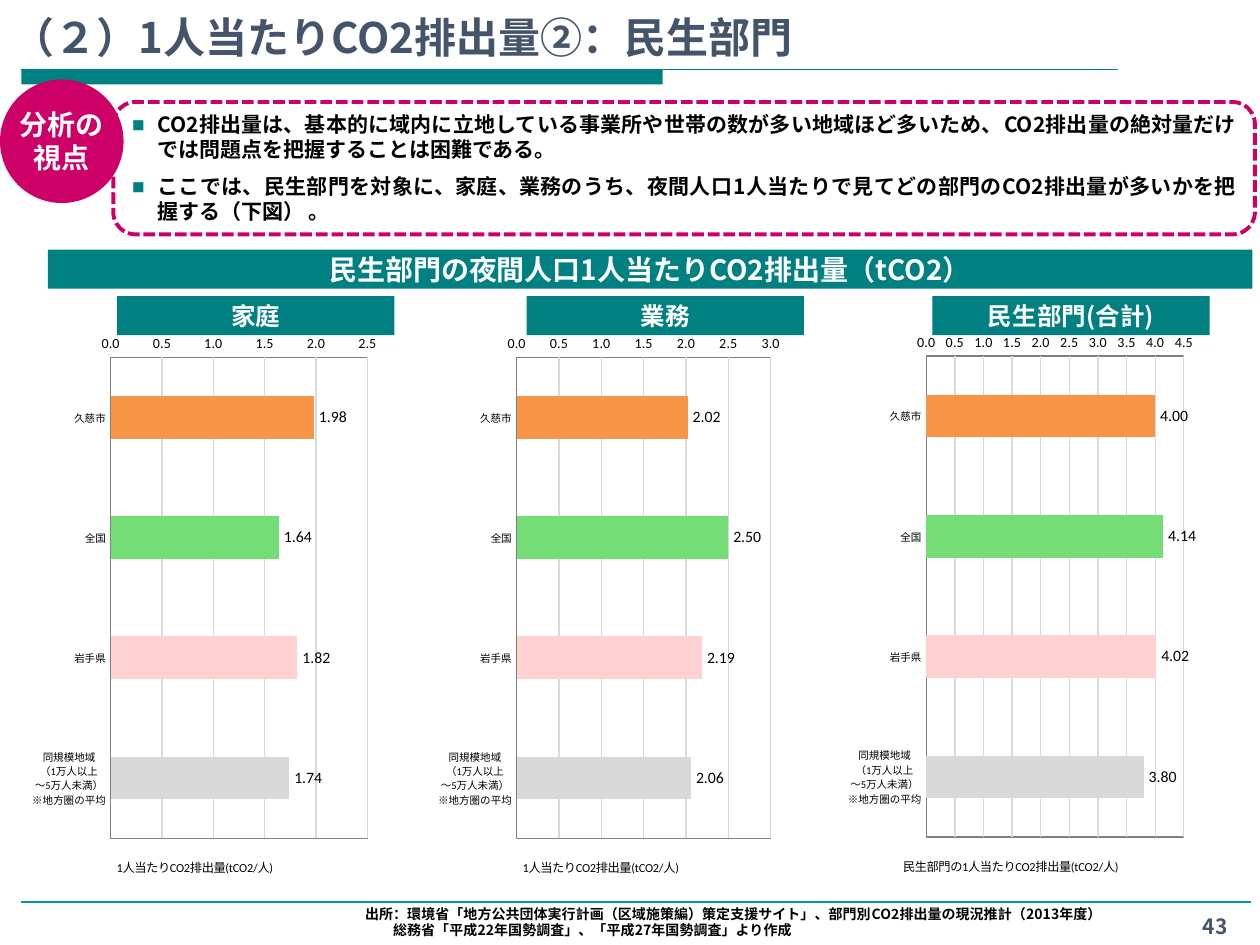
from dataclasses import dataclass

from lxml import etree
from pptx import Presentation
from pptx.chart.data import CategoryChartData
from pptx.dml.color import RGBColor
from pptx.enum.chart import XL_CHART_TYPE, XL_LABEL_POSITION, XL_TICK_MARK
from pptx.enum.dml import MSO_LINE
from pptx.enum.shapes import MSO_CONNECTOR, MSO_SHAPE
from pptx.enum.text import MSO_ANCHOR, PP_ALIGN
from pptx.oxml.ns import qn
from pptx.util import Pt

BARS = XL_CHART_TYPE.BAR_CLUSTERED
OUTSIDE = XL_LABEL_POSITION.OUTSIDE_END
NO_TICK = XL_TICK_MARK.NONE
DASH = MSO_LINE.SQUARE_DOT
STRAIGHT = MSO_CONNECTOR.STRAIGHT
RECT, OVAL, ROUND = MSO_SHAPE.RECTANGLE, MSO_SHAPE.OVAL, MSO_SHAPE.ROUNDED_RECTANGLE
MIDDLE, BOTTOM, TOP = MSO_ANCHOR.MIDDLE, MSO_ANCHOR.BOTTOM, MSO_ANCHOR.TOP
LEFT, CENTER, JUSTIFY = PP_ALIGN.LEFT, PP_ALIGN.CENTER, PP_ALIGN.JUSTIFY


@dataclass(frozen=True)
class Theme:
    font: str = "Noto Sans CJK JP"
    chart_font: str = "Calibri"
    teal: str = "008080"
    rule: str = "009999"
    pink: str = "CC0066"
    slate: str = "44546A"
    black: str = "000000"
    white: str = "FFFFFF"
    axis: str = "808080"
    grid: str = "D9D9D9"
    bars: tuple = ("F79646", "75DD75", "FFD1D1", "D9D9D9")
    title: int = 24
    head: int = 16
    sub: int = 14
    body: int = 12
    note: int = 8
    leading: float = 1.18


@dataclass(frozen=True)
class Box:
    x: float
    y: float
    w: float
    h: float

    def span(self) -> tuple:
        return Pt(self.x), Pt(self.y), Pt(self.w), Pt(self.h)


@dataclass(frozen=True)
class Panel:
    name: str
    head_x: float
    box: Box
    vals: tuple
    top: float
    caption: str
    caption_x: float


THEME = Theme()
UNIT = "1人当たりCO2排出量(tCO2/人)"
PLACES = ("久慈市", "全国", "岩手県",
          "同規模地域\n（1万人以上\n～5万人未満）\n※地方圏の平均")
PANELS = (
    Panel("家庭", 67, Box(13.7, 184.3, 206.6, 331.2),
          (1.98, 1.64, 1.82, 1.74), 2.5, UNIT, 0.25),
    Panel("業務", 301, Box(246.2, 184.3, 204.5, 331.2),
          (2.02, 2.5, 2.19, 2.06), 3, UNIT, 0.25),
    Panel("民生部門(合計)", 532.8, Box(479.5, 183.6, 207.4, 331.2),
          (4, 4.14, 4.02, 3.8), 4.5, "民生部門の" + UNIT, 0.17),
)
POINTS = (
    "CO2排出量は、基本的に域内に立地している事業所や世帯の数が多い地域ほど多いため、"
    "CO2排出量の絶対量だけでは問題点を把握することは困難である。",
    "ここでは、民生部門を対象に、家庭、業務のうち、夜間人口1人当たりで見て"
    "どの部門のCO2排出量が多いかを把握する（下図） 。",
)
SOURCES = (
    "出所：環境省「地方公共団体実行計画（区域施策編）策定支援サイト」、"
    "部門別CO2排出量の現況推計（2013年度）",
    "総務省「平成22年国勢調査」、「平成27年国勢調査」より作成",
)


def rgb(code: str) -> RGBColor:
    return RGBColor.from_string(code)


def add(parent, tag: str, **attrs):
    return etree.SubElement(parent, qn(tag), attrs)


def write(shape, lines: tuple, size: int, color: str, align=CENTER, anchor=MIDDLE) -> list:
    """Fill a shape with bold paragraphs and return them."""
    frame = shape.text_frame
    frame.word_wrap = True
    frame.vertical_anchor = anchor
    for i, line in enumerate(lines):
        para = frame.add_paragraph() if i else frame.paragraphs[0]
        para.text = line
        para.alignment = align
        para.line_spacing = Pt(round(size * THEME.leading, 1))
    return [style(para, size, color) for para in frame.paragraphs]


def style(para, size: int, color: str):
    font = para.font
    font.size, font.bold, font.name = Pt(size), True, THEME.font
    font.color.rgb = rgb(color)
    add(para._p.pPr.find(qn("a:defRPr")), "a:ea", typeface=THEME.font)
    return para


def indent(para, left: float, first: float = 0) -> None:
    props = para._p.get_or_add_pPr()
    props.set("marL", str(Pt(left)))
    props.set("indent", str(Pt(first)))


def bullet(para) -> None:
    indent(para, 14.4, -14.4)
    props = para._p.pPr
    marks = etree.Element("marks")
    add(add(marks, "a:buClr"), "a:srgbClr", val=THEME.teal)
    add(marks, "a:buSzPct", val="60000")
    add(marks, "a:buFont", typeface=THEME.font)
    add(marks, "a:buChar", char="■")
    font = props.find(qn("a:defRPr"))
    for mark in list(marks):
        font.addprevious(mark)


def block(slide, kind, box: Box, fill: str = ""):
    shape = slide.shapes.add_shape(kind, *box.span())
    shape.shadow.inherit = False
    shape.line.fill.background()
    if fill:
        shape.fill.solid()
        shape.fill.fore_color.rgb = rgb(fill)
    else:
        shape.fill.background()
    return shape


def rule(slide, x: float, y: float, end: float, color: str) -> None:
    line = slide.shapes.add_connector(STRAIGHT, Pt(x), Pt(y), Pt(end), Pt(y))
    line.line.color.rgb = rgb(color)
    line.line.width = Pt(0.75)
    add(line._element.spPr, "a:effectLst")


def place(part, **spots: float) -> None:
    """Give a chart part a fixed layout, in fractions of the chart."""
    layout = part.find(qn("c:layout"))
    if layout is None:
        layout = etree.Element(qn("c:layout"))
        part.insert(0, layout)
    manual = add(layout, "c:manualLayout")
    if "w" in spots:
        add(manual, "c:layoutTarget", val="inner")
    for side in "xy":
        add(manual, f"c:{side}Mode", val="edge")
    for key, value in spots.items():
        add(manual, f"c:{key}", val=str(value))


def chart_font(font, size: int) -> None:
    font.size, font.bold, font.name = Pt(size), False, THEME.chart_font
    font.color.rgb = rgb(THEME.black)


def stroke(line, color: str) -> None:
    line.color.rgb = rgb(color)
    line.width = Pt(0.75)


def graph(slide, panel: Panel) -> None:
    data = CategoryChartData()
    data.categories = PLACES
    data.add_series("Series 1", panel.vals)
    chart = slide.shapes.add_chart(BARS, *panel.box.span(), data).chart
    chart.has_title = chart.has_legend = False
    chart_font(chart.font, 10)

    plot = chart.plots[0]
    plot.gap_width, plot.vary_by_categories = 182, False
    for i, color in enumerate(THEME.bars):
        fill = plot.series[0].points[i].format.fill
        fill.solid()
        fill.fore_color.rgb = rgb(color)
    plot.has_data_labels = True
    labels = plot.data_labels
    labels.show_value, labels.position = True, OUTSIDE
    labels.number_format = "#,##0.00_);[Red]\\(#,##0.00\\)"
    labels.number_format_is_linked = False
    chart_font(labels.font, 9)

    cats, vals = chart.category_axis, chart.value_axis
    for axis, size in ((cats, 6), (vals, 8)):
        axis.major_tick_mark = axis.minor_tick_mark = NO_TICK
        chart_font(axis.tick_labels.font, size)
    cats.reverse_order = True
    stroke(cats.format.line, THEME.axis)
    vals.minimum_scale, vals.maximum_scale, vals.major_unit = 0, panel.top, 0.5
    vals.tick_labels.number_format = "#,##0.0;[Red]\\-#,##0.0"
    vals.tick_labels.number_format_is_linked = False
    vals.format.line.fill.background()
    stroke(vals.major_gridlines.format.line, THEME.grid)
    title = vals.axis_title
    title.text_frame.text = panel.caption
    chart_font(title.text_frame.paragraphs[0].font, 7)
    place(title._element, x=panel.caption_x, y=0.92)

    area = chart._chartSpace.chart.plotArea
    place(area, x=0.24, y=0.06, w=0.71, h=0.83)
    edge = add(add(area, "c:spPr"), "a:ln", w=str(Pt(0.75)))
    add(add(edge, "a:solidFill"), "a:srgbClr", val=THEME.axis)


def main() -> None:
    deck = Presentation()
    deck.slide_width, deck.slide_height = Pt(720), Pt(540)
    slide = deck.slides.add_slide(deck.slide_layouts[6])
    text = slide.shapes.add_textbox

    block(slide, RECT, Box(12.2, 39.6, 366.5, 8.6), THEME.teal)
    rule(slide, 12.2, 39.6, 638.6, THEME.teal)
    rule(slide, 12.2, 515.5, 715, THEME.rule)
    for panel in PANELS:
        graph(slide, panel)

    write(text(*Box(0, 0, 625.7, 38.9).span()), ("（２）1人当たりCO2排出量②：民生部門",),
          THEME.title, THEME.slate, LEFT, BOTTOM)
    write(text(*Box(668.9, 518.4, 51.1, 20.2).span()), ("43",),
          THEME.body, THEME.slate, anchor=TOP)

    frame = block(slide, ROUND, Box(64.8, 58.3, 652.3, 75.6))
    frame.line.color.rgb = rgb(THEME.pink)
    frame.line.width, frame.line.dash_style = Pt(2.25), DASH
    paras = write(frame, POINTS, THEME.body, THEME.black, JUSTIFY)
    for para in paras:
        bullet(para)
        para.space_after = Pt(4)
    paras[1].space_before = Pt(3)

    badge = block(slide, OVAL, Box(0, 45.4, 70.6, 70.6), THEME.pink)
    write(badge, ("分析の\v視点",), THEME.head, THEME.white)
    badge.text_frame.word_wrap = False
    badge.text_frame.margin_left = badge.text_frame.margin_right = Pt(2.9)

    write(block(slide, RECT, Box(27.4, 142.6, 688.3, 22.3), THEME.teal),
          ("民生部門の夜間人口1人当たりCO2排出量（tCO2）",), THEME.head, THEME.white)
    for panel in PANELS:
        write(block(slide, RECT, Box(panel.head_x, 169.2, 158.4, 22.3), THEME.teal),
              (panel.name,), THEME.sub, THEME.white)

    notes = write(text(*Box(201.6, 513.4, 472.3, 26.6).span()), SOURCES,
                  THEME.note, THEME.black, JUSTIFY, BOTTOM)
    indent(notes[0], 14.4, -14.4)
    indent(notes[1], 16)
    deck.save("out.pptx")


if __name__ == "__main__":
    main()
